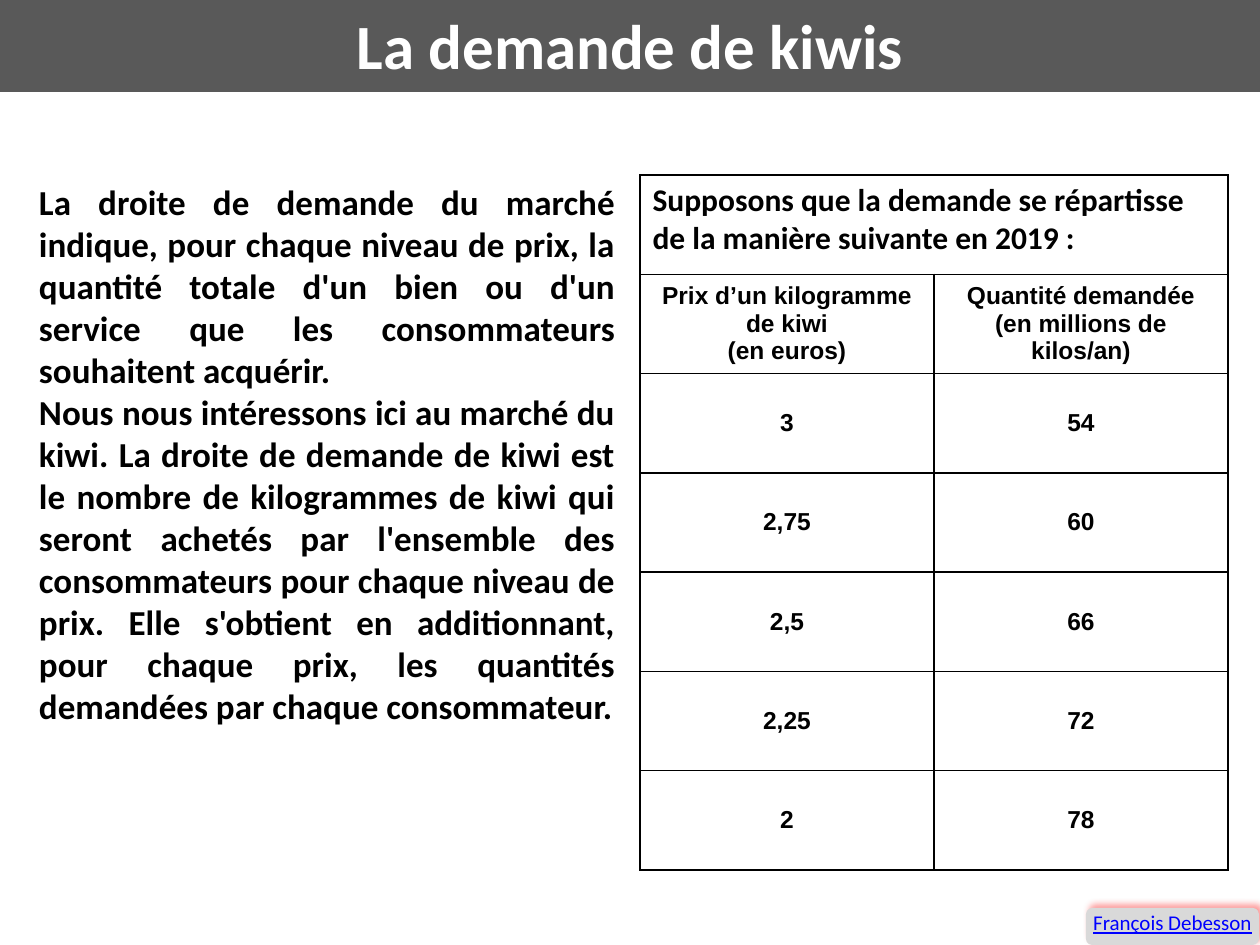
from lxml.etree import SubElement, fromstring
from pptx import Presentation
from pptx.dml.color import RGBColor
from pptx.enum.shapes import MSO_SHAPE as SHAPE
from pptx.enum.text import MSO_ANCHOR as ANCHOR, PP_ALIGN as ALIGN
from pptx.oxml.ns import nsdecls, qn
from pptx.util import Emu, Pt

TITLE = "La demande de kiwis"
BODY = [
    "La droite de demande du marché indique, pour chaque niveau de prix, la quantité totale "
    "d'un bien ou d'un service que les consommateurs souhaitent acquérir.",
    "Nous nous intéressons ici au marché du kiwi. La droite de demande de kiwi est le nombre "
    "de kilogrammes de kiwi qui seront achetés par l'ensemble des consommateurs pour chaque "
    "niveau de prix. Elle s'obtient en additionnant, pour chaque prix, les quantités demandées "
    "par chaque consommateur.",
]
CAPTION = "Supposons que la demande se répartisse de la manière suivante en 2019 :"
ROWS = [
    ("Prix d’un kilogramme de kiwi\n(en euros)", "Quantité demandée\n(en millions de kilos/an)"),
    ("3", "54"),
    ("2,75", "60"),
    ("2,5", "66"),
    ("2,25", "72"),
    ("2", "78"),
]
AUTHOR = "François Debesson"

TITLE_BOX = (0, -4, 1260, 96)
BODY_BOX = (34, 175, 586, 562)
TABLE_BOX = (640, 175, 588, 695)
AUTHOR_BOX = (1086, 908, 173, 37)
BLACK = "000000"


def px(n):
    return Emu(round(n * 914400 / 126))


def box(dims):
    return [px(n) for n in dims]


def rgb(value):
    return RGBColor.from_string(value)


def write(tf, text, size, color=BLACK, name="Calibri", align=ALIGN.LEFT, bold=True):
    tf.text = text
    for p in tf.paragraphs:
        p.alignment = align
        for r in p.runs:
            r.font.name, r.font.size, r.font.bold = name, Pt(size), bold
            r.font.color.rgb = rgb(color)


def inset(tf, margin):
    tf.word_wrap = True
    tf.margin_left = tf.margin_right = tf.margin_top = tf.margin_bottom = px(margin)


def add_block(slide, kind, dims, fill):
    sp = slide.shapes.add_shape(kind, *box(dims))
    sp.shadow.inherit = False
    sp.fill.solid()
    sp.fill.fore_color.rgb = rgb(fill)
    sp.line.fill.background()
    return sp


def add_glow(sp, color):
    effects = sp._element.spPr.find(qn("a:effectLst"))
    effects.append(fromstring(
        f'<a:outerShdw {nsdecls("a")} blurRad="{Pt(4)}" dist="{Pt(3)}" dir="18900000" '
        f'algn="bl" rotWithShape="0"><a:srgbClr val="{color}"><a:alpha val="40000"/>'
        '</a:srgbClr></a:outerShdw>'))


def add_borders(cell):
    tcPr = cell._tc.get_or_add_tcPr()
    for i, side in enumerate(("lnL", "lnR", "lnT", "lnB")):
        ln = SubElement(tcPr, qn(f"a:{side}"), w=str(Pt(1)))
        SubElement(SubElement(ln, qn("a:solidFill")), qn("a:srgbClr"), val=BLACK)
        tcPr.insert(i, ln)


def add_demand_table(slide):
    table = slide.shapes.add_table(len(ROWS) + 1, 2, *box(TABLE_BOX)).table
    table.first_row = table.horz_banding = False
    for col in table.columns:
        col.width = px(TABLE_BOX[2] / 2)
    for row in table.rows:
        row.height = px(TABLE_BOX[3] / len(table.rows))
    for cell in table.iter_cells():
        cell.fill.background()
        add_borders(cell)
    table.cell(0, 0).merge(table.cell(0, 1))
    write(table.cell(0, 0).text_frame, CAPTION, 18)
    for i, row in enumerate(ROWS, 1):
        for j, text in enumerate(row):
            cell = table.cell(i, j)
            cell.vertical_anchor = ANCHOR.MIDDLE
            cell.margin_left = cell.margin_right = px(9)
            cell.margin_top = cell.margin_bottom = 0
            write(cell.text_frame, text, 14, name="Arial", align=ALIGN.CENTER)


def main():
    prs = Presentation()
    prs.slide_width, prs.slide_height = px(1260), px(945)
    s = prs.slides.add_slide(prs.slide_layouts[6])

    title = add_block(s, SHAPE.RECTANGLE, TITLE_BOX, "595959")
    inset(title.text_frame, 5)
    title.text_frame.vertical_anchor = ANCHOR.MIDDLE
    write(title.text_frame, TITLE, 36, "FFFFFF", align=ALIGN.CENTER)

    body = s.shapes.add_textbox(*box(BODY_BOX))
    inset(body.text_frame, 5)
    write(body.text_frame, "\n".join(BODY), 20, align=ALIGN.JUSTIFY)

    add_demand_table(s)

    author = add_block(s, SHAPE.ROUNDED_RECTANGLE, AUTHOR_BOX, "D9D9D9")
    add_glow(author, "FF0000")
    inset(author.text_frame, 0)
    author.text_frame.vertical_anchor = ANCHOR.TOP
    write(author.text_frame, AUTHOR, 12, "0000FF", align=ALIGN.CENTER, bold=False)
    author.text_frame.paragraphs[0].runs[0].font.underline = True

    prs.save("out.pptx")


if __name__ == "__main__":
    main()
